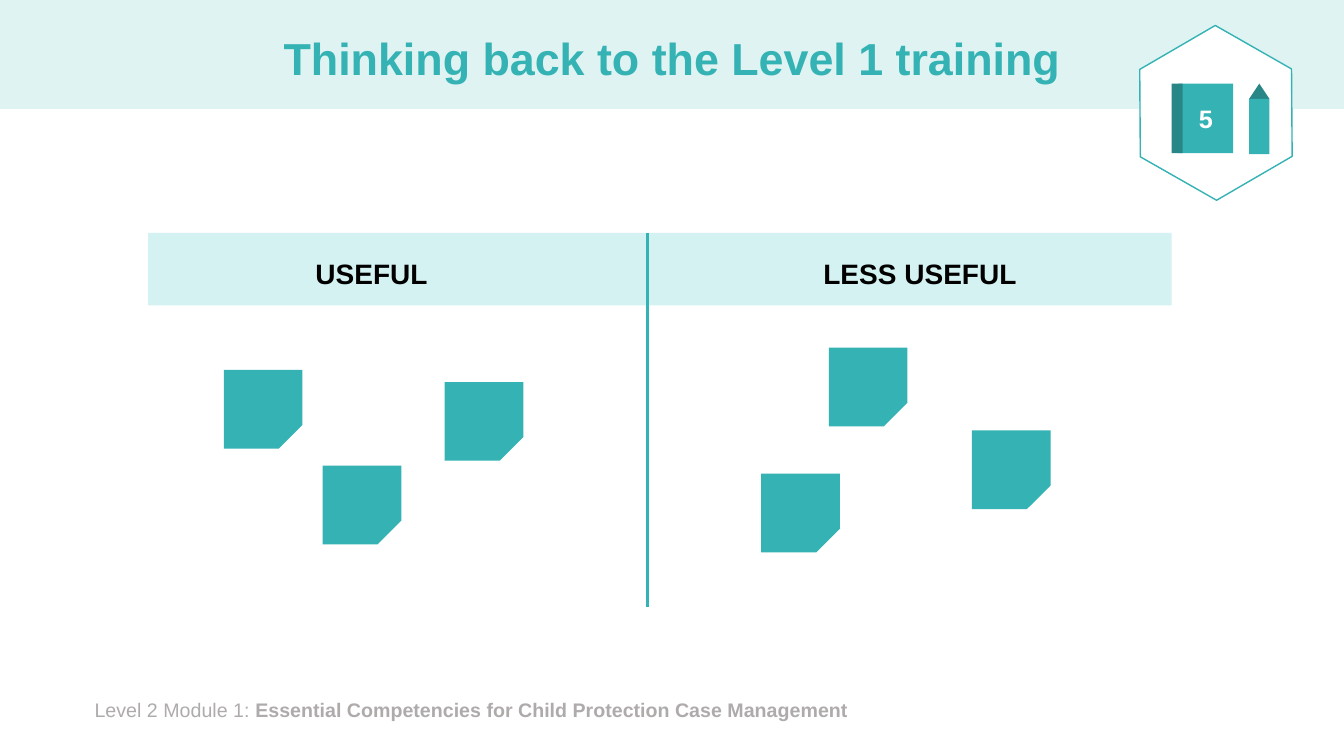
from dataclasses import dataclass

from lxml import etree
from pptx import Presentation
from pptx.dml.color import RGBColor
from pptx.enum.shapes import MSO_CONNECTOR as Connector, MSO_SHAPE as Shape
from pptx.enum.text import MSO_ANCHOR as Anchor, PP_ALIGN as Align
from pptx.oxml.ns import qn
from pptx.util import Emu, Pt

PX = 9144  # EMU per px, 100 px to the inch


@dataclass(frozen=True)
class Theme:
    font: str = "Arial"
    teal: str = "35B2B4"
    dark_teal: str = "288687"
    banner: str = "DEF3F2"
    header: str = "D4F2F2"
    white: str = "FFFFFF"
    black: str = "000000"
    grey: str = "AFABAB"
    title_size: int = 32
    header_size: int = 20
    number_size: int = 18
    footer_size: int = 14


class SlideBuilder:
    def __init__(self, slide, theme):
        self.slide = slide
        self.theme = theme

    def box(self, *at):
        return [Emu(v * PX) for v in at]

    def shape(self, kind, at, fill, line=None, adjust=()):
        s = self.slide.shapes.add_shape(kind, *self.box(*at))
        s.shadow.inherit = False
        s.fill.solid()
        s.fill.fore_color.rgb = RGBColor.from_string(fill)
        if line:
            s.line.color.rgb = RGBColor.from_string(line)
            s.line.width = Pt(1)
        else:
            s.line.fill.background()
        for i, value in enumerate(adjust):
            s.adjustments[i] = value
        return s

    def label(self, s, runs, size, color, align=Align.CENTER, anchor=Anchor.MIDDLE):
        """Fill a shape with one paragraph of (text, bold) runs."""
        tf = s.text_frame
        tf.word_wrap = True
        tf.vertical_anchor = anchor
        p = tf.paragraphs[0]
        p.alignment = align
        p.font.name = self.theme.font
        p.font.size = Pt(size)
        p.font.color.rgb = RGBColor.from_string(color)
        for text, bold in runs:
            r = p.add_run()
            r.text = text
            r.font.bold = bold
        return p

    def text(self, at, runs, size, color, align=Align.CENTER, anchor=Anchor.TOP):
        s = self.slide.shapes.add_textbox(*self.box(*at))
        return self.label(s, runs, size, color, align, anchor)

    def line(self, x1, y1, x2, y2, color, width):
        c = self.slide.shapes.add_connector(Connector.STRAIGHT, *self.box(x1, y1, x2, y2))
        c.line.color.rgb = RGBColor.from_string(color)
        c.line.width = Pt(width)
        etree.SubElement(c._element.spPr, qn("a:effectLst"))

    def note(self, x, y, side=78):
        """Sticky note with its lower right corner cut off."""
        s = self.shape(Shape.SNIP_1_RECTANGLE, (x, y, side, side), self.theme.teal, adjust=[0.3])
        s._element.spPr.get_or_add_xfrm().set("flipV", "1")


def main():
    prs = Presentation()
    prs.slide_width, prs.slide_height = Emu(1333 * PX), Emu(750 * PX)
    t = Theme()
    b = SlideBuilder(prs.slides.add_slide(prs.slide_layouts[6]), t)

    # Banner, footer and title
    b.shape(Shape.RECTANGLE, (0, 0, 1333, 108), t.banner)
    footer = [("Level 2 Module 1: ", False),
              ("Essential Competencies for Child Protection Case Management", True)]
    b.text((84, 687, 1056, 34), footer, t.footer_size, t.grey, Align.LEFT)
    title = b.text((92, 13, 1150, 95), [("Thinking back to the Level 1 training", True)],
                   t.title_size, t.teal, anchor=Anchor.MIDDLE)
    title.line_spacing = 0.9

    # Badge with workbook and pencil
    badge = b.shape(Shape.HEXAGON, (1119, 37, 174, 150), t.white, t.teal, [0.29, 1.155])
    badge.rotation = 29.7
    book = b.shape(Shape.RECTANGLE, (1169, 83, 54, 69), t.teal)
    b.label(book, [("5", True)], t.number_size, t.white)
    b.shape(Shape.RECTANGLE, (1162, 83, 11, 69), t.dark_teal)
    b.shape(Shape.ISOSCELES_TRIANGLE, (1239, 83, 20, 15), t.dark_teal)
    b.shape(Shape.RECTANGLE, (1239, 98, 20, 55), t.teal)

    # Two-column header and divider
    b.shape(Shape.RECTANGLE, (147, 231, 1015, 72), t.header)
    for x, heading in ((212, "USEFUL"), (756, "LESS USEFUL")):
        b.text((x, 250, 313, 44), [(heading, True)], t.header_size, t.black)
    b.line(642, 231, 642, 602, t.teal, 2.25)

    # Sticky notes, left column then right
    for x, y in ((222, 367), (320, 462), (441, 379),
                 (822, 345), (755, 470), (964, 427)):
        b.note(x, y)

    prs.save("out.pptx")


if __name__ == "__main__":
    main()
